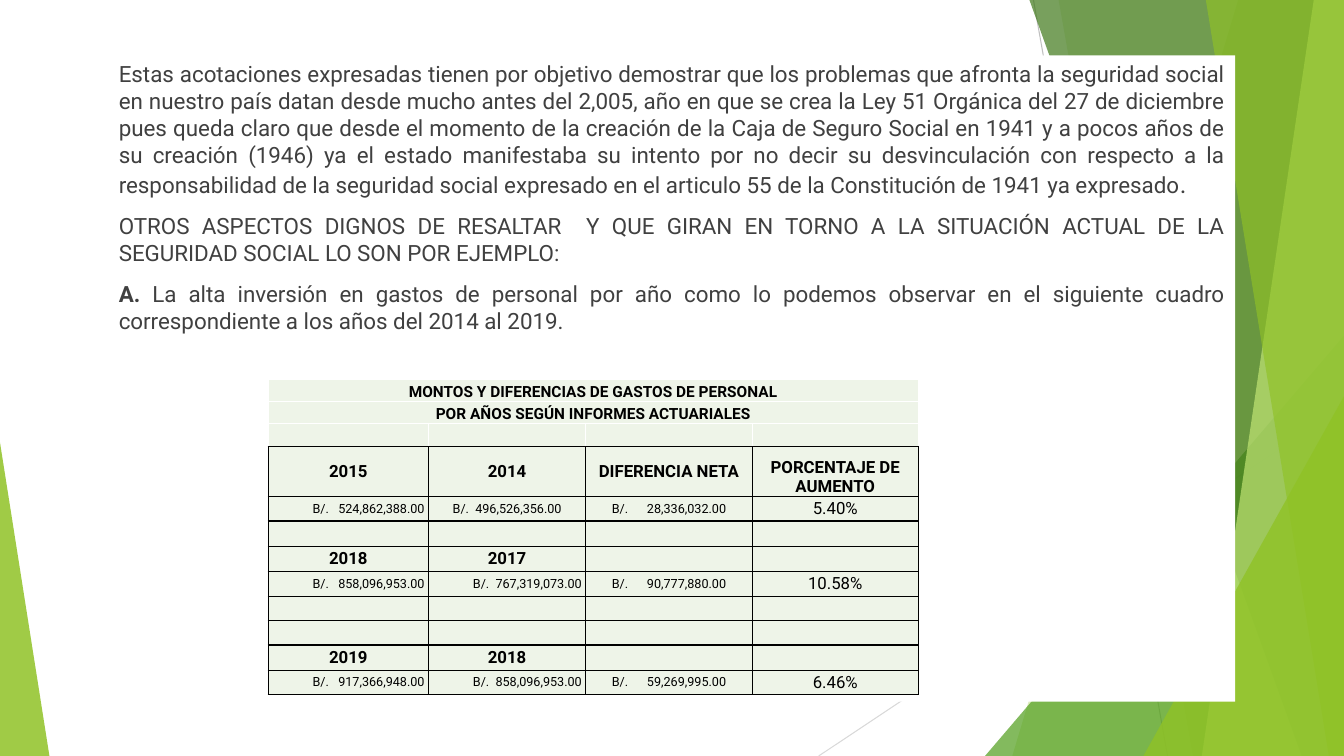
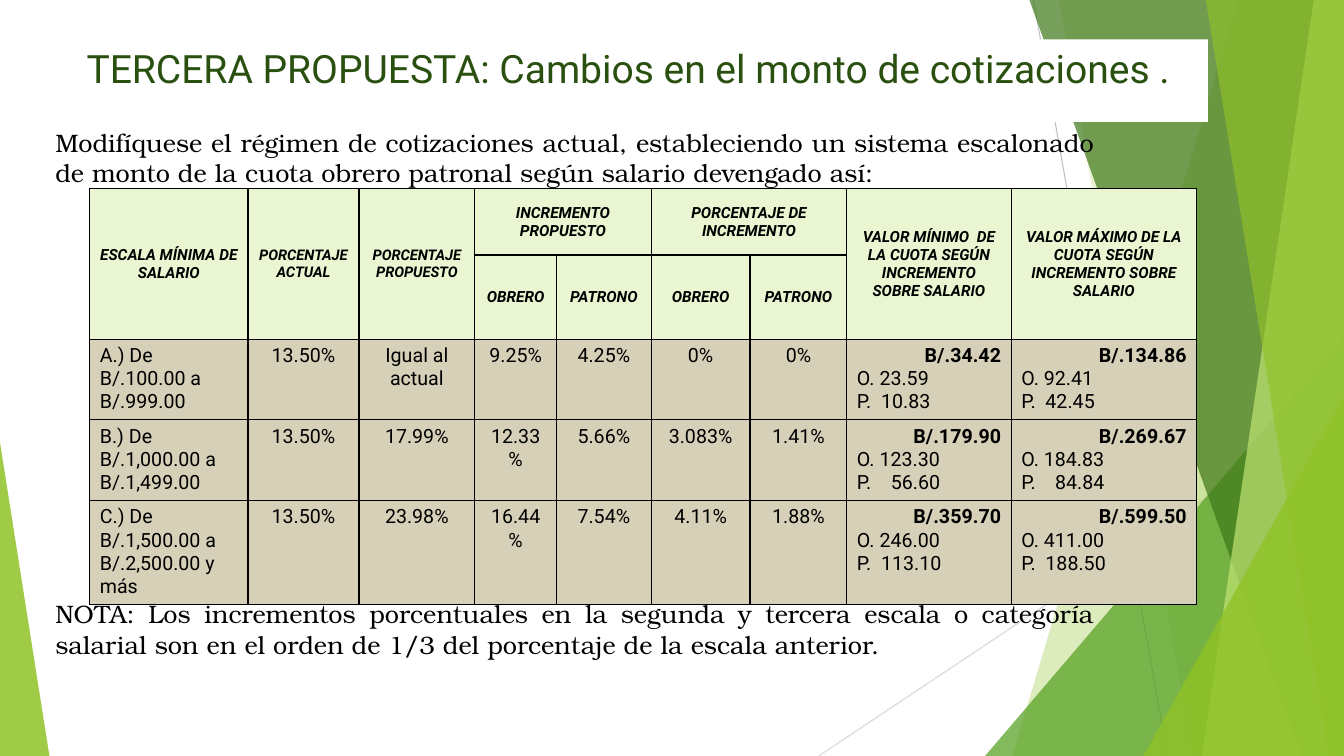
from lxml import etree
from pptx import Presentation
from pptx.dml.color import RGBColor
from pptx.enum.shapes import MSO_CONNECTOR, MSO_SHAPE
from pptx.enum.text import MSO_ANCHOR, PP_ALIGN
from pptx.oxml.ns import qn
from pptx.util import Inches, Pt

LEFT, CENTER, RIGHT, JUSTIFY = PP_ALIGN.LEFT, PP_ALIGN.CENTER, PP_ALIGN.RIGHT, PP_ALIGN.JUSTIFY
TOP, MIDDLE, BOTTOM = MSO_ANCHOR.TOP, MSO_ANCHOR.MIDDLE, MSO_ANCHOR.BOTTOM
STRAIGHT = MSO_CONNECTOR.STRAIGHT
TRIANGLE = MSO_SHAPE.ISOSCELES_TRIANGLE

COLORS = {
    "white": "FFFFFF", "black": "000000", "body": "404040", "title": "2A5010",
    "lime": "90C226", "green": "54A021", "forest": "3F7819", "pale": "C0E474",
    "gray": "BFBFBF", "silver": "D9D9D9",
    "spending": "EEF4E8", "heading": "EAF6D1", "scale": "D6D0B8",
}
BODY_FONT, SERIF_FONT = "Roboto", "TeX Gyre Bonum"
WIDTH, HEIGHT = 13.33, 7.5


def rgb(name):
    return RGBColor.from_string(COLORS[name])


def write(frame, text, size=14, color="black", font=BODY_FONT, bold=False, italic=False,
          align=LEFT, before=0, joined=False):
    paragraph = frame.paragraphs[-1]
    if paragraph.runs and not joined:
        paragraph = frame.add_paragraph()
    paragraph.alignment = align
    paragraph.space_before = Pt(before)
    run = paragraph.add_run()
    run.text = text
    run.font.size, run.font.name = Pt(size), font
    run.font.bold, run.font.italic = bold, italic
    run.font.color.rgb = rgb(color)


class Deck:
    def __init__(self):
        self.presentation = Presentation()
        self.presentation.slide_width = Inches(WIDTH)
        self.presentation.slide_height = Inches(HEIGHT)
        self.shapes = None

    def new_slide(self):
        layout = self.presentation.slide_layouts[6]
        self.shapes = self.presentation.slides.add_slide(layout).shapes
        self.line((10.25, 0), (11.58, HEIGHT), "gray")
        self.line((WIDTH, 4.03), (8.12, HEIGHT), "silver")
        self.band(12.28, 10.04, "lime", 30)
        self.band(10.5, 11.83, "lime", 20)
        self.triangle(9.77, 3.33, 3.56, 1, "green", 72)
        self.band(10.21, 12.91, "forest", 70)
        self.band(13.03, 11.92, "pale", 70)
        self.band(11.96, 13.18, "lime", 65)
        self.triangle(11.34, 3.93, 1.99, 1, "lime", 80)
        self.triangle(0, 4.39, 0.49, 0, "lime", 85)

    def line(self, start, end, color):
        line = self.shapes.add_connector(STRAIGHT, *map(Inches, start + end))
        line.line.color.rgb = rgb(color)
        line.line.width = Pt(0.75)
        etree.SubElement(line._element.spPr, qn("a:effectLst"))

    def paint(self, shape, color, opacity):
        shape.shadow.inherit = False
        shape.line.fill.background()
        shape.fill.solid()
        shape.fill.fore_color.rgb = rgb(color)
        tint = shape._element.spPr.find(qn("a:solidFill"))[0]
        etree.SubElement(tint, qn("a:alpha"), val=str(opacity * 1000))

    def band(self, top_x, bottom_x, color, opacity):
        outline = self.shapes.build_freeform(Inches(top_x), 0)
        corners = [(WIDTH, 0), (WIDTH, HEIGHT), (bottom_x, HEIGHT)]
        outline.add_line_segments([(Inches(x), Inches(y)) for x, y in corners], close=True)
        self.paint(outline.convert_to_shape(), color, opacity)

    def triangle(self, left, top, width, tip, color, opacity):
        shape = self.shapes.add_shape(
            TRIANGLE, *map(Inches, (left, top, width, HEIGHT - top)))
        shape.adjustments[0] = tip
        self.paint(shape, color, opacity)

    def text_box(self, left, top, width, height, fill=None):
        box = self.shapes.add_textbox(*map(Inches, (left, top, width, height)))
        if fill:
            box.fill.solid()
            box.fill.fore_color.rgb = rgb(fill)
        box.text_frame.word_wrap = True
        return box.text_frame

    def table(self, left, top, columns, rows):
        table = self.shapes.add_table(
            len(rows), len(columns),
            *map(Inches, (left, top, sum(columns), sum(rows)))).table
        table.first_row = table.horz_banding = False
        for column, width in zip(table.columns, columns):
            column.width = Inches(width)
        for row, height in zip(table.rows, rows):
            row.height = Inches(height)
        return table

    def style_cell(self, cell, fill, border="black", bottom=None, anchor=TOP, insets=(0.1, 0.05)):
        properties = cell._tc.get_or_add_tcPr()
        for side in "LRTB":
            edge = etree.SubElement(properties, qn(f"a:ln{side}"), w=str(Pt(1)))
            paint = etree.SubElement(edge, qn("a:solidFill"))
            color = bottom if bottom and side == "B" else border
            etree.SubElement(paint, qn("a:srgbClr"), val=COLORS[color])
        cell.fill.solid()
        cell.fill.fore_color.rgb = rgb(fill)
        cell.vertical_anchor = anchor
        cell.margin_left = cell.margin_right = Inches(insets[0])
        cell.margin_top = cell.margin_bottom = Inches(insets[1])


def spending_slide(deck):
    deck.new_slide()
    body = deck.text_box(1.08, 0.55, 11.17, 6.41, "white")
    style = dict(size=16, color="body", align=JUSTIFY, before=10)
    write(body, "Estas acotaciones expresadas tienen por objetivo demostrar que los problemas que "
          "afronta la seguridad social en nuestro país datan desde mucho antes del 2,005, año en "
          "que se crea la Ley 51 Orgánica del 27 de diciembre pues queda claro que desde el "
          "momento de la creación de la Caja de Seguro Social en 1941 y a pocos años de su "
          "creación (1946) ya el estado manifestaba su intento por no decir su desvinculación "
          "con respecto a la responsabilidad de la seguridad social expresado en el articulo 55 "
          "de la Constitución de 1941 ya expresado", **style)
    write(body, ".", **{**style, "size": 18}, joined=True)
    write(body, "OTROS ASPECTOS DIGNOS DE RESALTAR  Y QUE GIRAN EN TORNO A LA SITUACIÓN ACTUAL "
          "DE LA SEGURIDAD SOCIAL LO SON POR EJEMPLO:", **style)
    write(body, "A. ", bold=True, **style)
    write(body, "La alta inversión en gastos de personal por año como lo podemos observar en el "
          "siguiente cuadro correspondiente a los años del 2014 al 2019.", joined=True, **style)

    blank = [""] * 4
    content = [
        ["MONTOS Y DIFERENCIAS DE GASTOS DE PERSONAL", "", "", ""],
        ["POR AÑOS SEGÚN INFORMES ACTUARIALES", "", "", ""],
        blank,
        ["2015", "2014", "DIFERENCIA NETA", "PORCENTAJE DE AUMENTO"],
        ["B/.   524,862,388.00", "B/.  496,526,356.00", "B/.      28,336,032.00", "5.40%"],
        blank,
        ["2018", "2017", "", ""],
        ["B/.   858,096,953.00", "B/.  767,319,073.00", "B/.      90,777,880.00", "10.58%"],
        blank,
        blank,
        ["2019", "2018", "", ""],
        ["B/.   917,366,948.00", "B/.  858,096,953.00", "B/.      59,269,995.00", "6.46%"],
    ]
    heights = [0.22, 0.22, 0.23, 0.5, 0.24, 0.25, 0.25, 0.25, 0.24, 0.24, 0.25, 0.24]
    spending = deck.table(2.66, 3.76, [1.59, 1.56, 1.65, 1.65], heights)
    for r, values in enumerate(content):
        for c, value in enumerate(values):
            cell = spending.cell(r, c)
            deck.style_cell(
                cell, "spending", border="white" if r < 3 else "black",
                bottom="black" if r == 2 else None,
                anchor=BOTTOM if r < 2 or (r, c) == (3, 3) else MIDDLE, insets=(0.04, 0))
            if not value:
                paragraph = cell.text_frame.paragraphs[0]._p
                etree.SubElement(paragraph, qn("a:endParaRPr"), sz="900")
                continue
            amount = value.startswith("B/.")
            to_right = amount and (c == 0 or c == 1 and r > 4)
            write(cell.text_frame, value, size=11 if r < 2 else 9 if amount else 12,
                  bold=not amount and "%" not in value, align=RIGHT if to_right else CENTER)
    for r in range(2):
        spending.cell(r, 0).merge(spending.cell(r, 3))


def contributions_slide(deck):
    deck.new_slide()
    title = deck.text_box(0.76, 0.39, 11.22, 0.82, "white")
    write(title, "TERCERA PROPUESTA: Cambios en el monto de cotizaciones .",
          size=27.9, color="title")
    serif = dict(size=18, font=SERIF_FONT, align=JUSTIFY, before=10)
    proposal = deck.text_box(0.45, 1.21, 10.5, 0.7)
    write(proposal, "Modifíquese el régimen de cotizaciones actual, estableciendo un sistema "
          "escalonado de monto de la cuota obrero patronal según salario devengado así:", **serif)
    note = deck.text_box(0.45, 5.89, 10.5, 0.7)
    write(note, "NOTA: Los incrementos porcentuales en la segunda y tercera escala o categoría "
          "salarial son en el orden de 1/3 del porcentaje de la escala anterior.", **serif)

    headings = [
        (0, 0, 2, 1, "ESCALA MÍNIMA DE SALARIO"),
        (0, 1, 2, 1, "PORCENTAJE\nACTUAL"),
        (0, 2, 2, 1, "PORCENTAJE\nPROPUESTO"),
        (0, 3, 1, 2, "INCREMENTO PROPUESTO"),
        (0, 5, 1, 2, "PORCENTAJE DE INCREMENTO"),
        (0, 7, 2, 1, "VALOR MÍNIMO  DE LA CUOTA SEGÚN INCREMENTO SOBRE SALARIO"),
        (0, 8, 2, 1, "VALOR MÁXIMO DE LA CUOTA SEGÚN INCREMENTO SOBRE SALARIO"),
        (1, 3, 1, 1, "OBRERO"), (1, 4, 1, 1, "PATRONO"),
        (1, 5, 1, 1, "OBRERO"), (1, 6, 1, 1, "PATRONO"),
    ]
    scales = [
        ["A.) De B/.100.00 a B/.999.00", "13.50%", "Igual al actual", "9.25%", "4.25%",
         "0%", "0%", "B/.34.42\nO. 23.59\nP.  10.83", "B/.134.86\nO. 92.41\nP.  42.45"],
        ["B.) De B/.1,000.00 a B/.1,499.00", "13.50%", "17.99%", "12.33%", "5.66%",
         "3.083%", "1.41%", "B/.179.90\nO. 123.30\nP.    56.60",
         "B/.269.67\nO. 184.83\nP.    84.84"],
        ["C.) De B/.1,500.00 a B/.2,500.00 y más", "13.50%", "23.98%", "16.44%", "7.54%",
         "4.11%", "1.88%", "B/.359.70\nO. 246.00\nP.  113.10",
         "B/.599.50\nO. 411.00\nP.  188.50"],
    ]
    quotas = deck.table(0.89, 1.87, [1.57, 1.1, 1.15, 0.81, 0.94, 0.98, 0.96, 1.63, 1.84],
                        [0.66, 0.82, 0.79, 0.79, 1.02])
    for r in range(2):
        for c in range(9):
            deck.style_cell(quotas.cell(r, c), "heading", anchor=MIDDLE)
    for r, c, tall, wide, heading in headings:
        cell = quotas.cell(r, c)
        if tall * wide > 1:
            cell.merge(quotas.cell(r + tall - 1, c + wide - 1))
        for line in heading.split("\n"):
            write(cell.text_frame, line, size=10.5 if c in (1, 2) else 11,
                  bold=True, italic=True, align=CENTER)
    for r, values in enumerate(scales, 2):
        for c, value in enumerate(values):
            cell = quotas.cell(r, c)
            deck.style_cell(cell, "scale")
            for line in value.split("\n"):
                total = c > 6 and line.startswith("B/.")
                align = RIGHT if total else JUSTIFY if c > 6 else CENTER if c else LEFT
                write(cell.text_frame, line, bold=total, align=align)


def main():
    deck = Deck()
    spending_slide(deck)
    contributions_slide(deck)
    deck.presentation.save("out.pptx")


if __name__ == "__main__":
    main()
